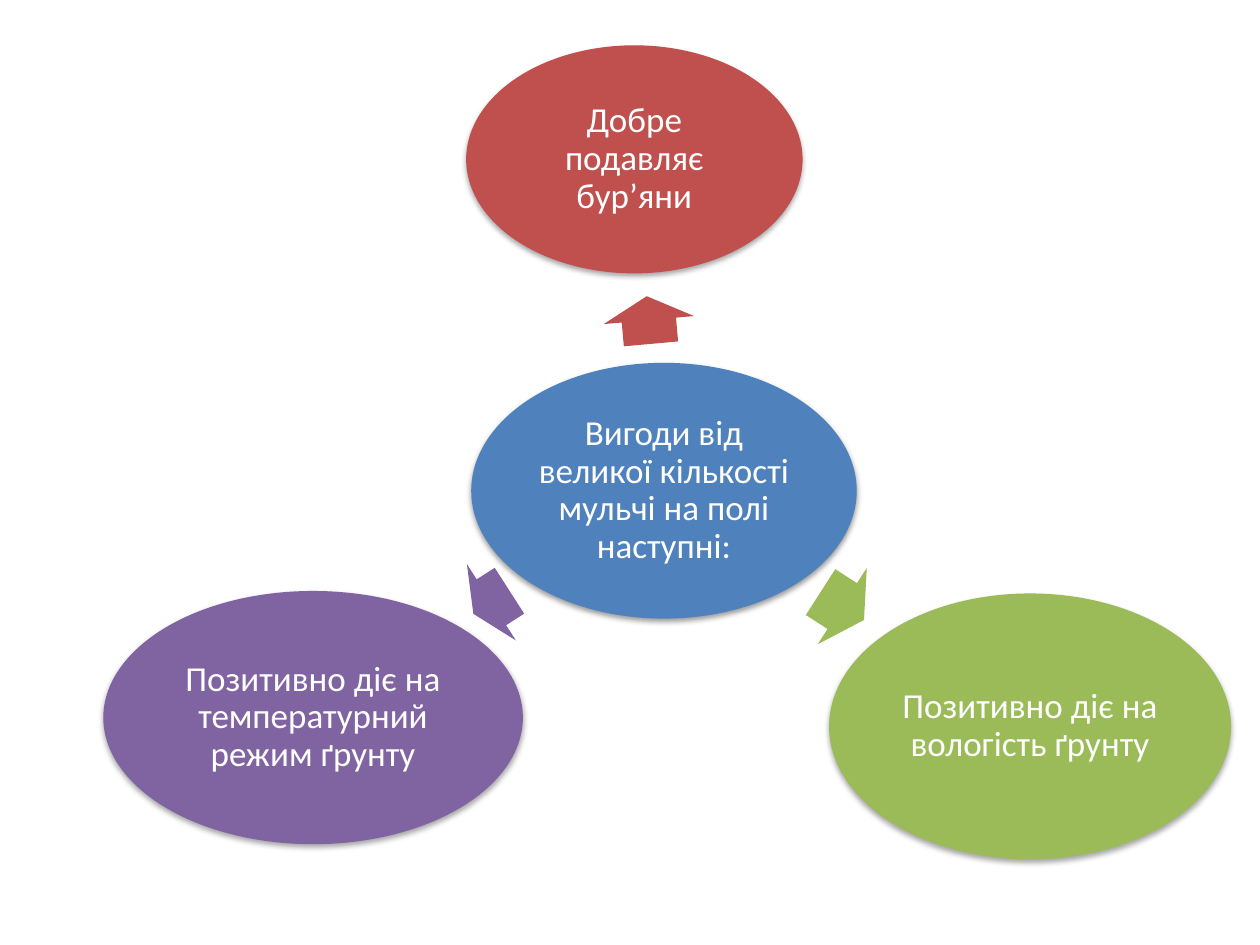
from lxml import etree
from pptx import Presentation
from pptx.dml.color import RGBColor
from pptx.enum.shapes import MSO_SHAPE
from pptx.enum.text import MSO_ANCHOR, PP_ALIGN
from pptx.oxml.ns import qn
from pptx.util import Inches, Pt

COLORS = {"blue": "4F81BD", "red": "C0504D", "green": "9BBB59",
          "purple": "8064A2", "white": "FFFFFF", "shadow": "000000"}

# Boxes are left, top, width, height in inches
TOPIC = ("Вигоди від великої кількості мульчі на полі наступні:",
         "blue", (3.74, 2.88, 3.06, 2.03))
# Benefit: text, colour, ellipse box, arrow box, arrow rotation
BENEFITS = [
    ("Добре подавляє бур’яни", "red",
     (3.7, 0.36, 2.67, 1.81), (4.96, 2.18, 0.38, 0.72), 264.9),
    ("Позитивно діє на вологість ґрунту", "green",
     (6.58, 4.71, 3.19, 2.11), (6.48, 4.45, 0.41, 0.72), 32.7),
    ("Позитивно діє на температурний режим ґрунту", "purple",
     (0.82, 4.69, 3.33, 2.01), (3.73, 4.42, 0.34, 0.72), 147.3),
]


def add_filled(slide, preset, box, color):
    shape = slide.shapes.add_shape(preset, *map(Inches, box))
    shape.shadow.inherit = False
    shape.fill.solid()
    shape.fill.fore_color.rgb = RGBColor.from_string(COLORS[color])
    shape.line.fill.background()
    return shape


def add_shadow(shape, distance, opacity):
    effects = shape._element.spPr.find(qn("a:effectLst"))
    shadow = etree.SubElement(
        effects, qn("a:outerShdw"), blurRad=str(Pt(3.1)),
        dist=str(Pt(distance)), dir="5400000", rotWithShape="0")
    color = etree.SubElement(shadow, qn("a:srgbClr"), val=COLORS["shadow"])
    etree.SubElement(color, qn("a:alpha"), val=str(opacity * 1000))


def add_bubble(slide, text, color, box, distance=1.8, opacity=35):
    bubble = add_filled(slide, MSO_SHAPE.OVAL, box, color)
    add_shadow(bubble, distance, opacity)
    frame = bubble.text_frame
    frame.word_wrap = True
    frame.vertical_anchor = MSO_ANCHOR.MIDDLE
    frame.margin_left = frame.margin_right = Inches(0.03)
    frame.margin_top = frame.margin_bottom = Inches(0.03)
    paragraph = frame.paragraphs[0]
    paragraph.text = text
    paragraph.alignment = PP_ALIGN.CENTER
    paragraph.line_spacing = 0.9
    paragraph.font.name = "Calibri"
    paragraph.font.size = Pt(20)
    paragraph.font.color.rgb = RGBColor.from_string(COLORS["white"])


def add_arrow(slide, color, box, rotation):
    arrow = add_filled(slide, MSO_SHAPE.RIGHT_ARROW, box, color)
    arrow.adjustments[0] = 0.6
    arrow.adjustments[1] = 0.5
    arrow.rotation = rotation


def main():
    deck = Presentation()
    deck.slide_width, deck.slide_height = Inches(10), Inches(7.5)
    slide = deck.slides.add_slide(deck.slide_layouts[6])

    # Central topic
    add_bubble(slide, *TOPIC, distance=1.6, opacity=38)

    # Benefits radiating from the topic
    for text, color, bubble_box, arrow_box, rotation in BENEFITS:
        add_arrow(slide, color, arrow_box, rotation)
        add_bubble(slide, text, color, bubble_box)

    deck.save("out.pptx")


if __name__ == "__main__":
    main()
